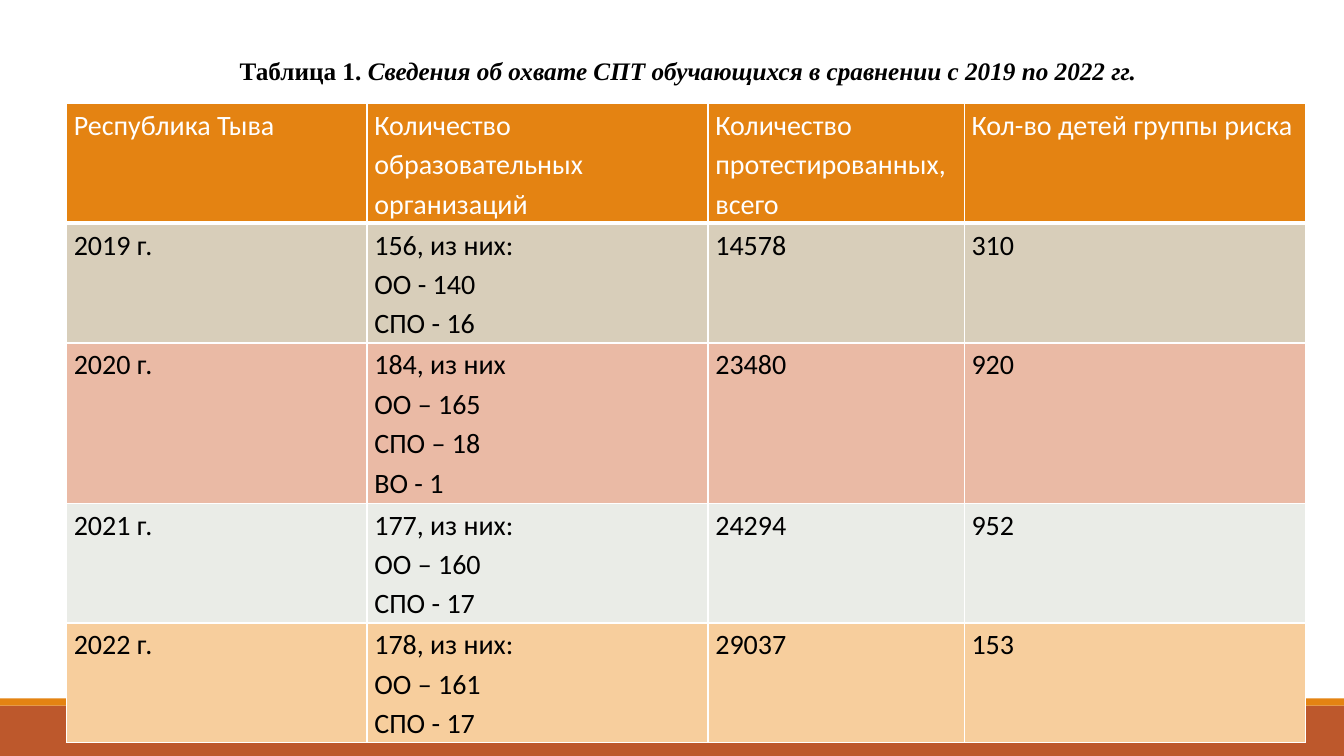
from lxml.etree import SubElement
from pptx import Presentation
from pptx.dml.color import RGBColor
from pptx.enum.shapes import MSO_SHAPE as Shape
from pptx.enum.text import MSO_ANCHOR as Anchor
from pptx.oxml.ns import qn
from pptx.util import Pt

COLORS = {
    "white": "FFFFFF", "black": "000000", "orange": "E48312", "rust": "BD582C",
    "sand": "D8CEBA", "pink": "EABAA5", "mist": "EAECE7", "peach": "F7CE9D",
}
CAPTION = [
    ("Таблица 1. ", False),
    ("Сведения об охвате СПТ обучающихся в сравнении с 2019 по 2022 гг.", True),
]
COVERAGE = [
    ("Республика Тыва", "Количество образовательных организаций",
     "Количество протестированных, всего", "Кол-во детей группы риска"),
    ("2019 г.", "156, из них:\nОО - 140\nСПО - 16", "14578", "310"),
    ("2020 г.", "184, из них\nОО – 165\nСПО – 18\nВО - 1", "23480", "920"),
    ("2021 г.", "177, из них:\nОО – 160\nСПО - 17", "24294", "952"),
    ("2022 г.", "178, из них:\nОО – 161\nСПО - 17", "29037", "153"),
]
ROW_FILLS = ["orange", "sand", "pink", "mist", "peach"]
ROW_HEIGHTS = [85.5, 85.5, 114.5, 85.5, 85.5]
COLUMN_WIDTHS = [214.7, 243.6, 183, 243.6]
FOOTER_BANDS = [("rust", 504, 36), ("orange", 498.8, 5.2)]
WIDTH, HEIGHT = 960, 540
CELL_FORMAT = {"margin_left": Pt(5.2), "margin_right": Pt(5.2),
               "margin_top": 0, "margin_bottom": 0, "vertical_anchor": Anchor.TOP}
CELL_FONT = {"name": "Calibri", "size": Pt(20), "bold": False}
CAPTION_FONT = {"name": "Times New Roman", "size": Pt(18), "bold": True}


def rgb(color):
    return RGBColor.from_string(COLORS[color])


def apply(target, values):
    for key, value in values.items():
        setattr(target, key, value)


def paint(target, color):
    target.fill.solid()
    target.fill.fore_color.rgb = rgb(color)


def add_borders(cell, row):
    widths = {"lnL": 1, "lnR": 1, "lnT": 3 if row == 1 else 1,
              "lnB": 3 if row == 0 else 1}
    properties = cell._tc.get_or_add_tcPr()
    for position, (side, width) in enumerate(widths.items()):
        border = SubElement(properties, qn("a:" + side), w=str(Pt(width)))
        properties.insert(position, border)
        fill = SubElement(border, qn("a:solidFill"))
        SubElement(fill, qn("a:srgbClr"), val=COLORS["white"])


def add_footer(slide):
    for color, top, height in FOOTER_BANDS:
        band = slide.shapes.add_shape(Shape.RECTANGLE, 0, Pt(top), Pt(WIDTH), Pt(height))
        paint(band, color)
        band.line.fill.background()
        band.shadow.inherit = False


def add_coverage(slide):
    coverage = slide.shapes.add_table(
        len(COVERAGE), len(COLUMN_WIDTHS), Pt(47.5), Pt(74),
        Pt(sum(COLUMN_WIDTHS)), Pt(sum(ROW_HEIGHTS))).table
    for column, width in zip(coverage.columns, COLUMN_WIDTHS):
        column.width = Pt(width)
    for row, texts in enumerate(COVERAGE):
        coverage.rows[row].height = Pt(ROW_HEIGHTS[row])
        for column, text in enumerate(texts):
            cell = coverage.cell(row, column)
            cell.text = text
            apply(cell, CELL_FORMAT)
            paint(cell, ROW_FILLS[row])
            add_borders(cell, row)
            for paragraph in cell.text_frame.paragraphs:
                paragraph.line_spacing = 1.15
                font = paragraph.runs[0].font
                apply(font, CELL_FONT)
                font.color.rgb = rgb("black" if row else "white")


def add_caption(slide):
    frame = slide.shapes.add_textbox(Pt(114.5), Pt(36), Pt(745), Pt(29)).text_frame
    apply(frame, {"word_wrap": True, "vertical_anchor": Anchor.MIDDLE})
    paragraph = frame.paragraphs[0]
    paragraph._p.get_or_add_pPr().set("indent", str(Pt(49.7)))
    for text, italic in CAPTION:
        run = paragraph.add_run()
        run.text = text
        apply(run.font, {**CAPTION_FONT, "italic": italic})
        run.font.color.rgb = rgb("black")


def main():
    deck = Presentation()
    apply(deck, {"slide_width": Pt(WIDTH), "slide_height": Pt(HEIGHT)})
    slide = deck.slides.add_slide(deck.slide_layouts[6])
    add_footer(slide)
    add_coverage(slide)
    add_caption(slide)
    deck.save("out.pptx")


if __name__ == "__main__":
    main()
